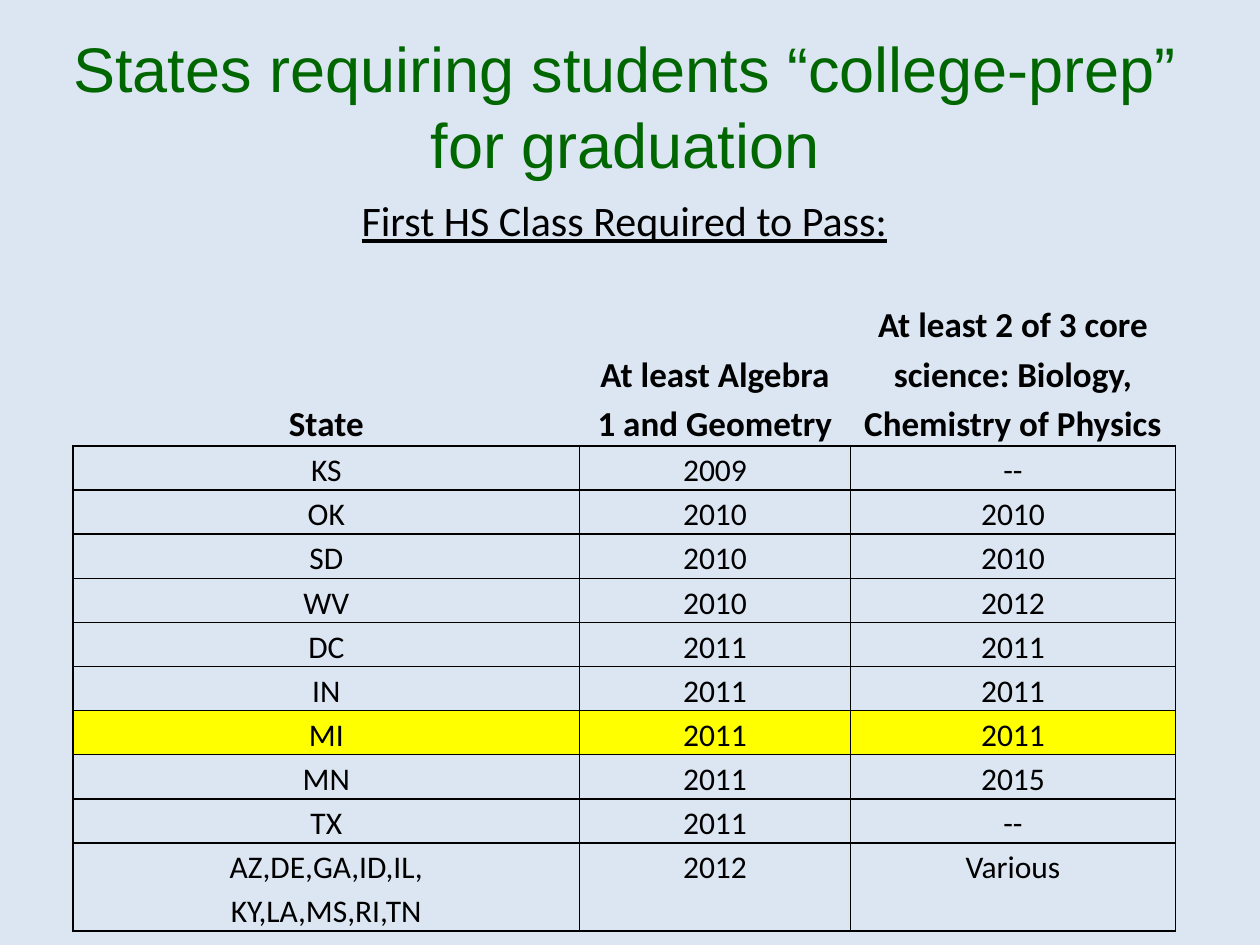
from dataclasses import dataclass

from lxml.etree import SubElement
from pptx import Presentation
from pptx.dml.color import RGBColor
from pptx.enum.text import MSO_ANCHOR, PP_ALIGN
from pptx.oxml.ns import qn
from pptx.util import Inches, Pt


@dataclass(frozen=True)
class Theme:
    background: str = "DCE6F2"
    heading: str = "006600"
    ink: str = "000000"
    highlight: str = "FFFF00"
    heading_font: str = "Arial"
    body_font: str = "Calibri"
    heading_size: int = 36
    caption_size: int = 24
    header_size: int = 20
    body_size: int = 18
    line_spacing: float = 1.15
    border_width: int = 1
    plain_table: str = "{2D5ABB26-0587-4C30-8999-92F81FD0307C}"


class SlideBuilder:
    def __init__(self, slide, theme):
        self.slide = slide
        self.theme = theme
        backdrop = slide.background.fill
        backdrop.solid()
        backdrop.fore_color.rgb = RGBColor.from_string(theme.background)

    def style(self, frame, font, size, color, bold=False, underline=False, spacing=None):
        for paragraph in frame.paragraphs:
            paragraph.alignment = PP_ALIGN.CENTER
            paragraph.line_spacing = spacing
            paragraph.font.name = font
            paragraph.font.size = Pt(size)
            paragraph.font.bold = bold
            paragraph.font.underline = underline
            paragraph.font.color.rgb = RGBColor.from_string(color)

    def title(self, text, left, top, width, height):
        frame = self.slide.shapes.add_textbox(
            Inches(left), Inches(top), Inches(width), Inches(height)
        ).text_frame
        frame.word_wrap = True
        frame.vertical_anchor = MSO_ANCHOR.MIDDLE
        frame.text = text
        self.style(frame, self.theme.heading_font, self.theme.heading_size, self.theme.heading)

    def table(self, left, top, widths, heights):
        table = self.slide.shapes.add_table(
            len(heights), len(widths), Inches(left), Inches(top),
            Inches(sum(widths)), Inches(sum(heights)),
        ).table
        table.first_row = False
        table.horz_banding = False
        table._tbl.tblPr.find(qn("a:tableStyleId")).text = self.theme.plain_table
        for column, width in zip(table.columns, widths):
            column.width = Inches(width)
        for row, height in zip(table.rows, heights):
            row.height = Inches(height)
        return table

    def cell(self, cell, text, size, sides="", fill=None, anchor=MSO_ANCHOR.TOP, **emphasis):
        cell.text = text
        cell.vertical_anchor = anchor
        cell.margin_left = cell.margin_right = Inches(0.07)
        cell.margin_top = cell.margin_bottom = 0
        self.style(cell.text_frame, self.theme.body_font, size, self.theme.ink,
                   spacing=self.theme.line_spacing, **emphasis)
        self.borders(cell, sides)
        if fill:
            cell.fill.solid()
            cell.fill.fore_color.rgb = RGBColor.from_string(fill)
        else:
            cell.fill.background()

    def borders(self, cell, sides):
        properties = cell._tc.get_or_add_tcPr()
        for side in sides:
            line = SubElement(properties, qn(f"a:ln{side}"), w=str(Pt(self.theme.border_width)))
            paint = SubElement(line, qn("a:solidFill"))
            SubElement(paint, qn("a:srgbClr"), val=self.theme.ink)


CAPTION = "First HS Class Required to Pass:"
HEADERS = [
    "State",
    "At least Algebra 1 and Geometry",
    "At least 2 of 3 core science: Biology, Chemistry of Physics",
]
REQUIREMENTS = [
    ("KS", "2009", "--"),
    ("OK", "2010", "2010"),
    ("SD", "2010", "2010"),
    ("WV", "2010", "2012"),
    ("DC", "2011", "2011"),
    ("IN", "2011", "2011"),
    ("MI", "2011", "2011"),
    ("MN", "2011", "2015"),
    ("TX", "2011", "--"),
    ("AZ,DE,GA,ID,IL,\nKY,LA,MS,RI,TN", "2012", "Various"),
]
HIGHLIGHTED_STATE = "MI"
LINE_HEIGHT = 0.35


def main():
    theme = Theme()
    presentation = Presentation()
    presentation.slide_width = Inches(10)
    presentation.slide_height = Inches(7.5)
    builder = SlideBuilder(
        presentation.slides.add_slide(presentation.slide_layouts[6]), theme
    )

    builder.title("States requiring students “college-prep” for graduation",
                  0.25, 0.17, 9.42, 1.33)

    state_heights = [LINE_HEIGHT * len(states.split("\n")) for states, *_ in REQUIREMENTS]
    table = builder.table(0.58, 1.5, [4.02, 2.15, 2.58], [0.47, 1.57] + state_heights)

    table.cell(0, 0).merge(table.cell(0, 2))
    builder.cell(table.cell(0, 0), CAPTION, theme.caption_size, underline=True)
    for column, header in enumerate(HEADERS):
        builder.cell(table.cell(1, column), header, theme.header_size, sides="B",
                     anchor=MSO_ANCHOR.BOTTOM, bold=True)
    for row, requirement in enumerate(REQUIREMENTS, start=2):
        fill = theme.highlight if requirement[0] == HIGHLIGHTED_STATE else None
        for column, text in enumerate(requirement):
            builder.cell(table.cell(row, column), text, theme.body_size,
                         sides="LRTB", fill=fill)

    presentation.save("out.pptx")


if __name__ == "__main__":
    main()
